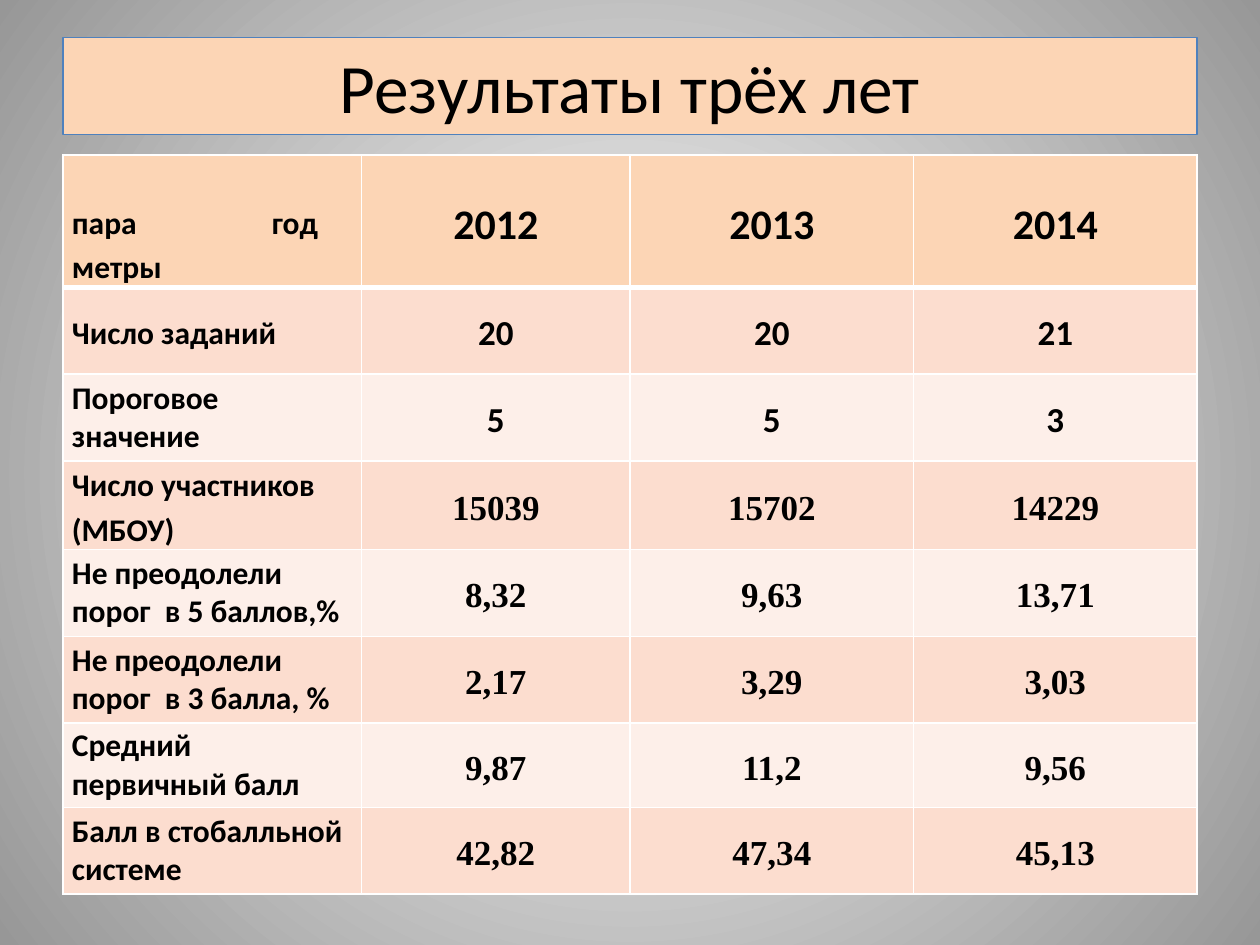
import lxml.etree
import pptx
import pptx.dml.color
import pptx.enum.shapes
import pptx.enum.text
import pptx.oxml.ns
import pptx.util

Cm = pptx.util.Cm
Pt = pptx.util.Pt
qn = pptx.oxml.ns.qn
ALIGN = pptx.enum.text.PP_ALIGN
MIDDLE = pptx.enum.text.MSO_ANCHOR.MIDDLE

COLORS = {
    "text": "000000", "header": "FCD5B5", "odd": "FCDDCF", "even": "FDEFE9",
    "border": "FFFFFF", "title_line": "4F81BD", "center": "FFFFFF", "edge": "979797",
}
SANS, SERIF = "Calibri", "Times New Roman"
TITLE = "Результаты трёх лет"
CORNER = "пара\tгод\nметры"
YEARS = ["2012", "2013", "2014"]
ROWS = [
    ("Число заданий", 1.15, SANS, ["20", "20", "21"]),
    ("Пороговое значение", 1, SANS, ["5", "5", "3"]),
    ("Число участников (МБОУ)", 1.15, SERIF, ["15039", "15702", "14229"]),
    ("Не преодолели порог  в 5 баллов,%", 1, SERIF, ["8,32", "9,63", "13,71"]),
    ("Не преодолели порог  в 3 балла, %", 1, SERIF, ["2,17", "3,29", "3,03"]),
    ("Средний первичный балл", 1, SERIF, ["9,87", "11,2", "9,56"]),
    ("Балл в стобалльной системе", 1, SERIF, ["42,82", "47,34", "45,13"]),
]
LEFT, WIDTH = 1.27, 22.86
COLUMN_WIDTHS = [6.02, 5.41, 5.72, 5.71]
ROW_HEIGHTS = [2.67, 1.75, 1.75, 1.78, 1.75, 1.75, 1.7, 1.75]
CORNER_TOP, CORNER_TAB = 0.89, 4.03


def rgb(name):
    return pptx.dml.color.RGBColor.from_string(COLORS[name])


def write_text(frame, text, size, font=SANS, bold=True, align=ALIGN.CENTER, spacing=1.15):
    frame.word_wrap = True
    for index, line in enumerate(text.split("\n")):
        paragraph = frame.add_paragraph() if index else frame.paragraphs[0]
        paragraph.alignment = align
        paragraph.line_spacing = spacing
        run = paragraph.add_run()
        run.text = line
        run.font.size = Pt(size)
        run.font.name = font
        run.font.bold = bold
        run.font.color.rgb = rgb("text")


def set_borders(cell, widths):
    properties = cell._tc.get_or_add_tcPr()
    for index, (side, width) in enumerate(widths.items()):
        line = lxml.etree.Element(qn("a:" + side), w=str(Pt(width)))
        fill = lxml.etree.SubElement(line, qn("a:solidFill"))
        lxml.etree.SubElement(fill, qn("a:srgbClr"), val=COLORS["border"])
        properties.insert(index, line)


def set_background(slide):
    fill = slide.background.fill
    fill.gradient()
    for stop, name in zip(fill.gradient_stops, ["center", "edge"]):
        stop.color.rgb = rgb(name)
    gradient = next(slide._element.iter(qn("a:gradFill")))
    for linear in gradient.findall(qn("a:lin")):
        gradient.remove(linear)
    circle = lxml.etree.Element(qn("a:path"), path="circle")
    lxml.etree.SubElement(circle, qn("a:fillToRect"), l="50000", t="50000", r="50000", b="50000")
    gradient.find(qn("a:gsLst")).addnext(circle)


def add_title(slide):
    shape = slide.shapes.add_shape(
        pptx.enum.shapes.MSO_SHAPE.RECTANGLE, Cm(LEFT), Cm(0.76), Cm(WIDTH), Cm(1.96))
    shape.shadow.inherit = False
    shape.fill.solid()
    shape.fill.fore_color.rgb = rgb("header")
    shape.line.color.rgb = rgb("title_line")
    shape.line.width = Pt(0.75)
    shape.text_frame.vertical_anchor = MIDDLE
    write_text(shape.text_frame, TITLE, 39.6, bold=False, spacing=1)


def fill_cell(cell, row_index, text, size, **text_format):
    cell.margin_left = cell.margin_right = Cm(0.18)
    cell.margin_top = cell.margin_bottom = 0
    cell.vertical_anchor = MIDDLE
    cell.fill.solid()
    cell.fill.fore_color.rgb = rgb("header" if row_index == 0 else "odd" if row_index % 2 else "even")
    top, bottom = (3 if row_index == 1 else 1), (3 if row_index == 0 else 1)
    set_borders(cell, {"lnL": 1, "lnR": 1, "lnT": top, "lnB": bottom})
    write_text(cell.text_frame, text, size, **text_format)


def add_results(slide):
    table = slide.shapes.add_table(
        len(ROW_HEIGHTS), len(COLUMN_WIDTHS),
        Cm(LEFT), Cm(3.12), Cm(WIDTH), Cm(sum(ROW_HEIGHTS))).table
    for column, width in zip(table.columns, COLUMN_WIDTHS):
        column.width = Cm(width)
    for row, height in zip(table.rows, ROW_HEIGHTS):
        row.height = Cm(height)
    for row_index, (label, spacing, font, values) in enumerate([(CORNER, 1.15, SANS, YEARS)] + ROWS):
        fill_cell(table.cell(row_index, 0), row_index, label, 18, align=ALIGN.LEFT, spacing=spacing)
        for column_index, value in enumerate(values, 1):
            fill_cell(table.cell(row_index, column_index), row_index, value,
                      20 if row_index else 24, font=font)
    corner = table.cell(0, 0)
    corner.margin_top = Cm(CORNER_TOP)
    properties = corner.text_frame.paragraphs[0]._p.get_or_add_pPr()
    tabs = lxml.etree.SubElement(properties, qn("a:tabLst"))
    lxml.etree.SubElement(tabs, qn("a:tab"), pos=str(Cm(CORNER_TAB)), algn="l")


def main():
    presentation = pptx.Presentation()
    presentation.slide_width, presentation.slide_height = Cm(25.4), Cm(19.05)
    slide = presentation.slides.add_slide(presentation.slide_layouts[6])
    set_background(slide)
    add_title(slide)
    add_results(slide)
    presentation.save("out.pptx")


if __name__ == "__main__":
    main()
